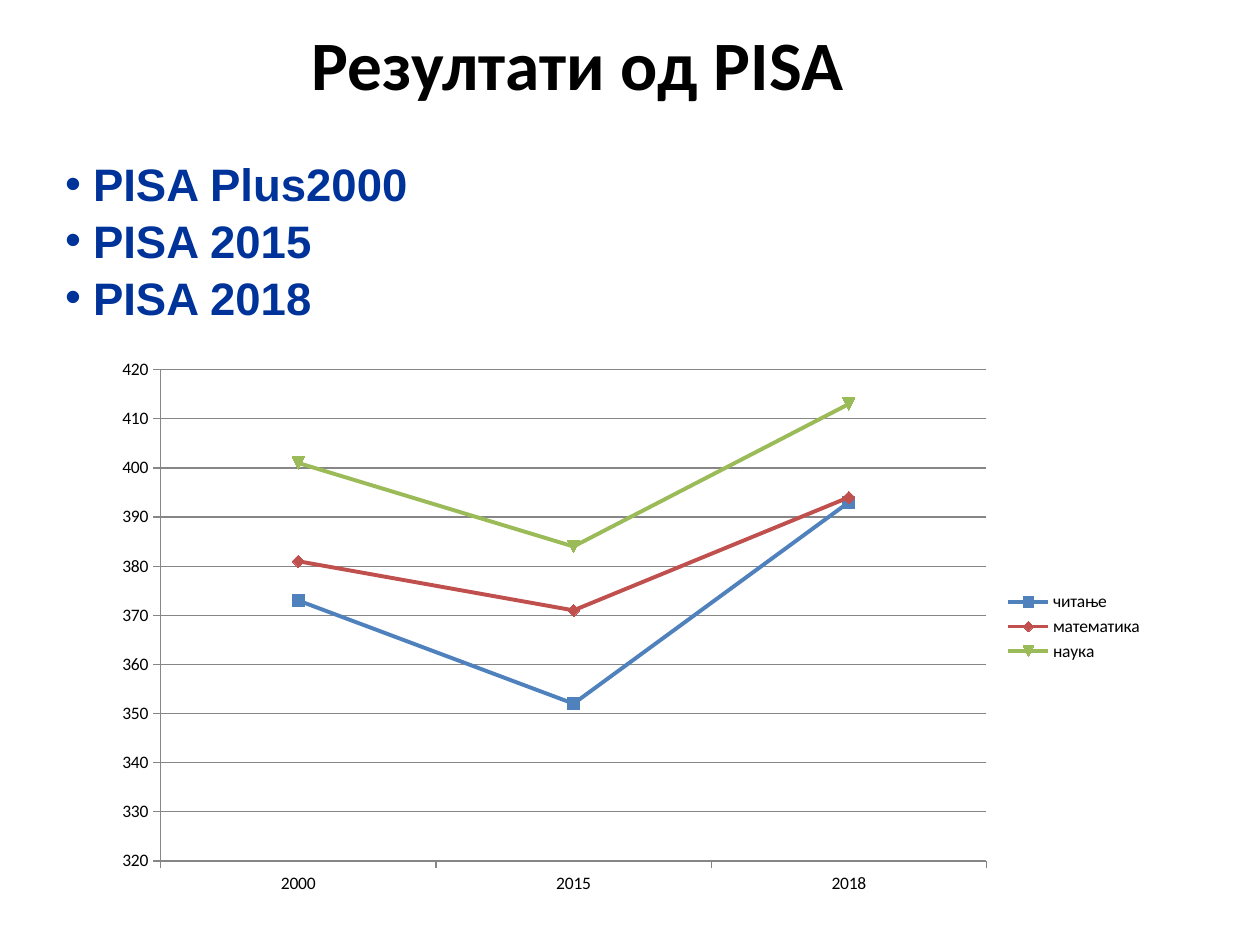
"""Build a slide with PISA results as a bulleted list and a line chart."""
from dataclasses import dataclass

from lxml.etree import SubElement
from pptx import Presentation
from pptx.chart.data import CategoryChartData
from pptx.dml.color import RGBColor
from pptx.enum.chart import XL_CHART_TYPE as ChartType
from pptx.enum.chart import XL_LEGEND_POSITION as LegendPosition
from pptx.enum.chart import XL_TICK_MARK as TickMark
from pptx.enum.text import MSO_ANCHOR as Anchor
from pptx.enum.text import PP_ALIGN as Align
from pptx.oxml import parse_xml
from pptx.oxml.ns import nsdecls, qn
from pptx.util import Pt

COLORS = {
    "text": "000000",
    "list": "003399",
    "axis": "868686",
    "reading": "4F81BD",
    "mathematics": "C0504D",
    "science": "9BBB59",
}
YEARS = ("2000", "2015", "2018")
ASSESSMENTS = ("PISA Plus2000", "PISA 2015", "PISA 2018")


@dataclass(frozen=True)
class Box:
    left: float
    top: float
    width: float
    height: float


@dataclass(frozen=True)
class Subject:
    name: str
    scores: tuple[int, ...]
    color: str


SUBJECTS = (
    Subject("читање", (373, 352, 393), "reading"),
    Subject("математика", (381, 371, 394), "mathematics"),
    Subject("наука", (401, 384, 413), "science"),
)
TITLE_BOX = Box(25, 8.5, 610, 45)
LIST_BOX = Box(30, 86.5, 288, 101.5)
CHART_BOX = Box(55.5, 198.5, 605, 319)
PLOT_AREA = {"x": 0.06, "y": 0.04, "w": 0.78, "h": 0.88}


def rgb(name: str) -> RGBColor:
    return RGBColor.from_string(COLORS[name])


def place(shape, box: Box) -> None:
    shape.left, shape.top = Pt(box.left), Pt(box.top)
    shape.width, shape.height = Pt(box.width), Pt(box.height)


def format_font(font, name: str, size: float, color: str, bold: bool) -> None:
    font.name, font.size, font.bold = name, Pt(size), bold
    font.color.rgb = rgb(color)


def fill_title(shape) -> None:
    place(shape, TITLE_BOX)
    frame = shape.text_frame
    frame.text = "Резултати од PISA"
    frame.vertical_anchor = Anchor.TOP
    paragraph = frame.paragraphs[0]
    paragraph.alignment = Align.CENTER
    format_font(paragraph.runs[0].font, "Calibri", 39.6, "text", True)


def fill_list(shape) -> None:
    place(shape, LIST_BOX)
    frame = shape.text_frame
    frame.text = "\n".join(ASSESSMENTS)
    frame.vertical_anchor = Anchor.MIDDLE
    for paragraph in frame.paragraphs:
        paragraph.space_before = Pt(1.2)
        properties = paragraph._p.get_or_add_pPr()
        properties.set("marL", str(Pt(16)))
        properties.set("indent", str(-Pt(16)))
        SubElement(properties, qn("a:buFont"), typeface="Arial")
        SubElement(properties, qn("a:buChar"), char="•")
        format_font(paragraph.runs[0].font, "Arial", 26, "list", True)


def format_line(line, color: str, width: float) -> None:
    line.color.rgb = rgb(color)
    line.width = Pt(width)


def fix_plot_area(chart) -> None:
    plot_area = chart._chartSpace.chart.plotArea
    for layout in plot_area.findall(qn("c:layout")):
        plot_area.remove(layout)
    edges = "".join(f'<c:{key}Mode val="edge"/>' for key in ("x", "y"))
    sizes = "".join(f'<c:{key} val="{value}"/>' for key, value in PLOT_AREA.items())
    plot_area.insert(0, parse_xml(
        f'<c:layout {nsdecls("c")}><c:manualLayout><c:layoutTarget val="inner"/>'
        f"{edges}{sizes}</c:manualLayout></c:layout>"
    ))


def add_results_chart(slide) -> None:
    data = CategoryChartData(number_format="General")
    data.categories = YEARS
    for subject in SUBJECTS:
        data.add_series(subject.name, subject.scores)
    box = CHART_BOX
    chart = slide.shapes.add_chart(
        ChartType.LINE_MARKERS,
        Pt(box.left), Pt(box.top), Pt(box.width), Pt(box.height), data,
    ).chart
    chart.has_title = False
    format_font(chart.font, "Calibri", 10, "text", False)
    chart.has_legend = True
    chart.legend.position = LegendPosition.RIGHT
    chart.legend.include_in_layout = False
    chart.plots[0].vary_by_categories = False
    for axis in (chart.category_axis, chart.value_axis):
        axis.major_tick_mark = TickMark.OUTSIDE
        axis.minor_tick_mark = TickMark.NONE
        format_line(axis.format.line, "axis", 0.75)
    scale = chart.value_axis
    scale.minimum_scale, scale.maximum_scale, scale.major_unit = 320, 420, 10
    scale.has_major_gridlines = True
    format_line(scale.major_gridlines.format.line, "axis", 0.75)
    for series, subject in zip(chart.plots[0].series, SUBJECTS):
        series.smooth = False
        format_line(series.format.line, subject.color, 2.25)
        series.marker.size = 7
        series.marker.format.fill.solid()
        series.marker.format.fill.fore_color.rgb = rgb(subject.color)
        format_line(series.marker.format.line, subject.color, 0.75)
    fix_plot_area(chart)


def main() -> None:
    presentation = Presentation()
    presentation.slide_width, presentation.slide_height = Pt(720), Pt(540)
    slide = presentation.slides.add_slide(presentation.slide_layouts[1])
    fill_title(slide.shapes.title)
    fill_list(slide.placeholders[1])
    add_results_chart(slide)
    presentation.save("out.pptx")


if __name__ == "__main__":
    main()
